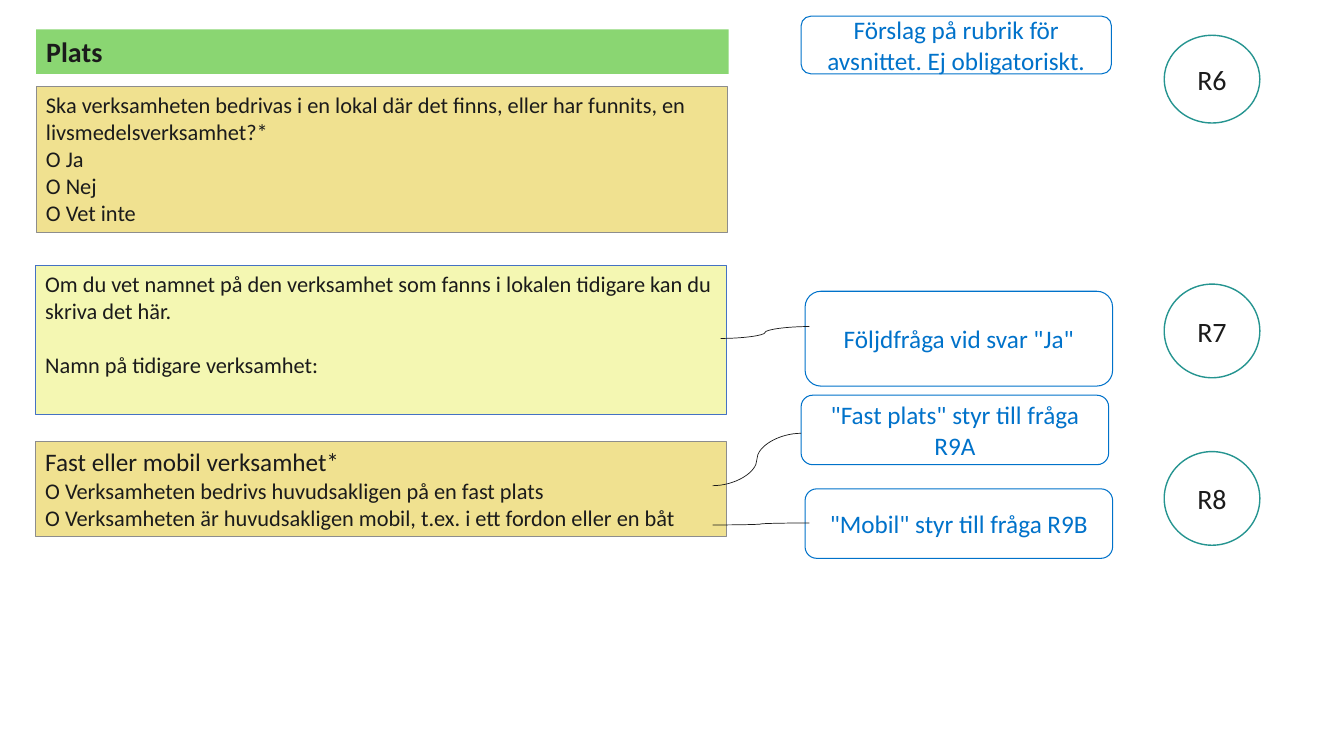
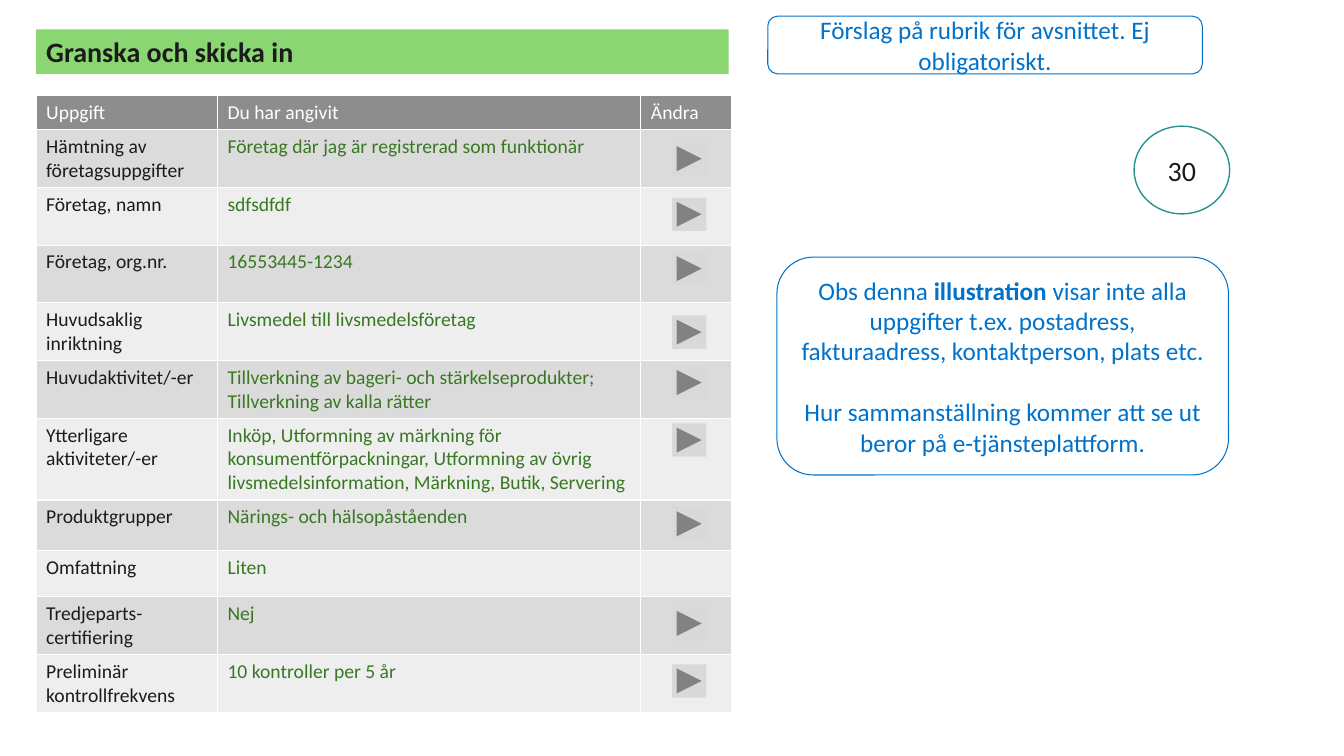
from lxml.etree import SubElement
from pptx import Presentation
from pptx.dml.color import RGBColor
from pptx.enum.shapes import MSO_CONNECTOR, MSO_SHAPE
from pptx.enum.text import MSO_ANCHOR, MSO_AUTO_SIZE, PP_ALIGN
from pptx.oxml.ns import qn
from pptx.util import Cm, Pt

INK = RGBColor(0x1B, 0x1B, 0x1B)
WHITE = RGBColor(0xFF, 0xFF, 0xFF)
BAND_GREEN = RGBColor(0x8A, 0xD6, 0x72)
ANSWER_GREEN = RGBColor(0x38, 0x78, 0x23)
SAND = RGBColor(0xF0, 0xE1, 0x90)
LEMON = RGBColor(0xF4, 0xF7, 0xB2)
NOTE_BLUE = RGBColor(0x00, 0x72, 0xCA)
FIELD_BLUE = RGBColor(0x44, 0x72, 0xC4)
TEAL = RGBColor(0x25, 0x94, 0x90)
GREY = RGBColor(0x8D, 0x8D, 0x8D)
BUTTON_GREY = RGBColor(0xD9, 0xD9, 0xD9)
ROW_GREYS = (RGBColor(0xDB, 0xDB, 0xDB), RGBColor(0xEE, 0xEE, 0xEE))

HEADING_HINT = "Förslag på rubrik för avsnittet. Ej obligatoriskt."

REVIEW_HEADER = ("Uppgift", "Du har angivit", "Ändra")
REVIEW_ROWS = (
    ("Hämtning av företagsuppgifter", "Företag där jag är registrerad som funktionär", 1.45, 3.58),
    ("Företag, namn", "sdfsdfdf", 1.45, 4.98),
    ("Företag, org.nr.", "16553445-1234", 1.45, 6.35),
    ("Huvudsaklig inriktning", "Livsmedel till livsmedelsföretag", 1.45, 7.95),
    ("Huvudaktivitet/-er",
     "Tillverkning av bageri- och stärkelseprodukter; Tillverkning av kalla rätter", 1.45, 9.22),
    ("Ytterligare aktiviteter/-er",
     "Inköp, Utformning av märkning för konsumentförpackningar, Utformning av övrig "
     "livsmedelsinformation, Märkning, Butik, Servering", 2.06, 10.67),
    ("Produktgrupper", "Närings- och hälsopåståenden", 1.27, 12.78),
    ("Omfattning", "Liten", 1.17, None),
    ("Tredjeparts-certifiering", "Nej", 1.45, 15.29),
    ("Preliminär kontrollfrekvens", "10 kontroller per 5 år", 1.45, 16.74),
)


class FormDeck:
    font_name = "Calibri"

    def __init__(self):
        self.deck = Presentation()
        self.deck.slide_width, self.deck.slide_height = Cm(33.87), Cm(19.05)
        self.slide = None

    def set_text(self, frame, paragraphs, size, color, align=PP_ALIGN.LEFT,
                 anchor=MSO_ANCHOR.TOP, gap=0, bold=False):
        frame_format = {"word_wrap": True, "auto_size": MSO_AUTO_SIZE.NONE,
                        "vertical_anchor": anchor}
        for key, value in frame_format.items():
            setattr(frame, key, value)
        for index, runs in enumerate(paragraphs):
            paragraph = frame.add_paragraph() if index else frame.paragraphs[0]
            paragraph.alignment = align
            if index and gap:
                paragraph.space_before = Pt(gap)
            for text, changes in ([(runs, {})] if isinstance(runs, str) else runs):
                run = paragraph.add_run()
                run.text = text
                run.font.color.rgb = color
                run_format = {"name": self.font_name, "size": Pt(size), "bold": bold, **changes}
                for key, value in run_format.items():
                    setattr(run.font, key, value)

    def shape(self, kind, box, fill=None, line=None, width=0.5):
        shape = self.slide.shapes.add_shape(kind, *map(Cm, box))
        shape.shadow.inherit = False
        if fill is None:
            shape.fill.background()
        else:
            shape.fill.solid()
            shape.fill.fore_color.rgb = fill
        if line is None:
            shape.line.fill.background()
        else:
            shape.line.color.rgb = line
            shape.line.width = Pt(width)
        return shape

    def start(self, heading):
        self.slide = self.deck.slides.add_slide(self.deck.slide_layouts[5])
        title = self.slide.shapes.title
        place = {"left": 0.91, "top": 0.74, "width": 17.45, "height": 1.12}
        for key, value in place.items():
            setattr(title, key, Cm(value))
        title.fill.solid()
        title.fill.fore_color.rgb = BAND_GREEN
        self.set_text(title.text_frame, [heading], 20, INK, anchor=MSO_ANCHOR.MIDDLE, bold=True)

    def question(self, box, paragraphs, fill=SAND, line=GREY, gap=0):
        panel = self.shape(MSO_SHAPE.RECTANGLE, box, fill, line)
        self.set_text(panel.text_frame, paragraphs, 16, INK, gap=gap)

    def note(self, box, paragraphs, gap=0):
        bubble = self.shape(MSO_SHAPE.ROUNDED_RECTANGLE, box, line=NOTE_BLUE, width=0.75)
        self.set_text(bubble.text_frame, paragraphs, 18, NOTE_BLUE, PP_ALIGN.CENTER,
                      MSO_ANCHOR.MIDDLE, gap)

    def badge(self, left, top, height, label):
        circle = self.shape(MSO_SHAPE.OVAL, (left, top, 2.41, height), WHITE, TEAL, 1)
        self.set_text(circle.text_frame, [label], 20, INK, PP_ALIGN.CENTER, MSO_ANCHOR.MIDDLE)

    def curve(self, *ends):
        link = self.slide.shapes.add_connector(MSO_CONNECTOR.CURVE, *map(Cm, ends))
        link.line.color.rgb = INK
        link.line.width = Pt(0.5)
        SubElement(link._element.spPr, qn("a:effectLst"))

    def cell(self, cell, text, fill, color):
        cell.fill.solid()
        cell.fill.fore_color.rgb = fill
        if text:
            self.set_text(cell.text_frame, [text], 14, color)

    def review_table(self, left, top, widths):
        heights = [0.86] + [row[2] for row in REVIEW_ROWS]
        table = self.slide.shapes.add_table(
            len(heights), len(widths), Cm(left), Cm(top), Cm(sum(widths)), Cm(sum(heights))).table
        for column, width in zip(table.columns, widths):
            column.width = Cm(width)
        for row, height in zip(table.rows, heights):
            row.height = Cm(height)
        for column, label in enumerate(REVIEW_HEADER):
            self.cell(table.cell(0, column), label, GREY, WHITE)
        for index, (item, answer, _, button_top) in enumerate(REVIEW_ROWS):
            contents = ((item, INK), (answer, ANSWER_GREEN), (None, INK))
            for column, (text, color) in enumerate(contents):
                self.cell(table.cell(index + 1, column), text, ROW_GREYS[index % 2], color)
            if button_top:
                self.shape(MSO_SHAPE.ACTION_BUTTON_FORWARD_OR_NEXT,
                           (16.94, button_top, 0.86, 0.84), BUTTON_GREY)


def build_place(form):
    form.start("Plats")
    form.question((0.91, 2.18, 17.42, 3.68), [
        "Ska verksamheten bedrivas i en lokal där det finns, eller har funnits, en "
        "livsmedelsverksamhet?*", "O Ja", "O Nej", "O Vet inte"])
    form.question((0.89, 6.68, 17.42, 3.76), [
        "Om du vet namnet på den verksamhet som fanns i lokalen tidigare kan du skriva det här.",
        "Namn på tidigare verksamhet:"], LEMON, FIELD_BLUE, gap=19.5)
    form.question((0.89, 11.13, 17.42, 2.39), [
        [("Fast eller mobil verksamhet*", {"size": Pt(18)})],
        "O Verksamheten bedrivs huvudsakligen på en fast plats",
        "O Verksamheten är huvudsakligen mobil, t.ex. i ett fordon eller en båt"])
    for left, top, width, height, text in (
            (20.19, 0.41, 7.82, 1.45, HEADING_HINT),
            (20.29, 7.34, 7.75, 2.39, 'Följdfråga vid svar "Ja"'),
            (20.19, 9.96, 7.75, 1.75, '"Fast plats" styr till fråga R9A'),
            (20.29, 12.32, 7.75, 1.75, '"Mobil" styr till fråga R9B')):
        form.note((left, top, width, height), [text])
    for top, height, label in ((0.89, 2.21, "R6"), (7.16, 2.36, "R7"), (11.38, 2.36, "R8")):
        form.badge(29.34, top, height, label)
    form.curve(18.16, 8.53, 20.4, 8.23)
    form.curve(17.96, 12.24, 20.19, 10.92)
    form.curve(17.96, 13.23, 20.4, 13.18)


def build_review(form):
    form.start("Granska och skicka in")
    form.review_table(0.91, 2.41, (4.57, 10.67, 2.29))
    form.note((19.35, 0.41, 10.95, 1.45), [HEADING_HINT])
    form.badge(28.58, 3.18, 2.21, "30")
    form.note((19.58, 6.48, 11.38, 5.49), [
        [("Obs denna ", {}), ("illustration ", {"bold": True}),
         ("visar inte alla uppgifter t.ex. postadress, fakturaadress, kontaktperson, plats etc.",
          {})],
        "Hur sammanställning kommer att se ut beror på e-tjänsteplattform."], gap=22)


def main():
    form = FormDeck()
    build_place(form)
    build_review(form)
    form.deck.save("out.pptx")


if __name__ == "__main__":
    main()
